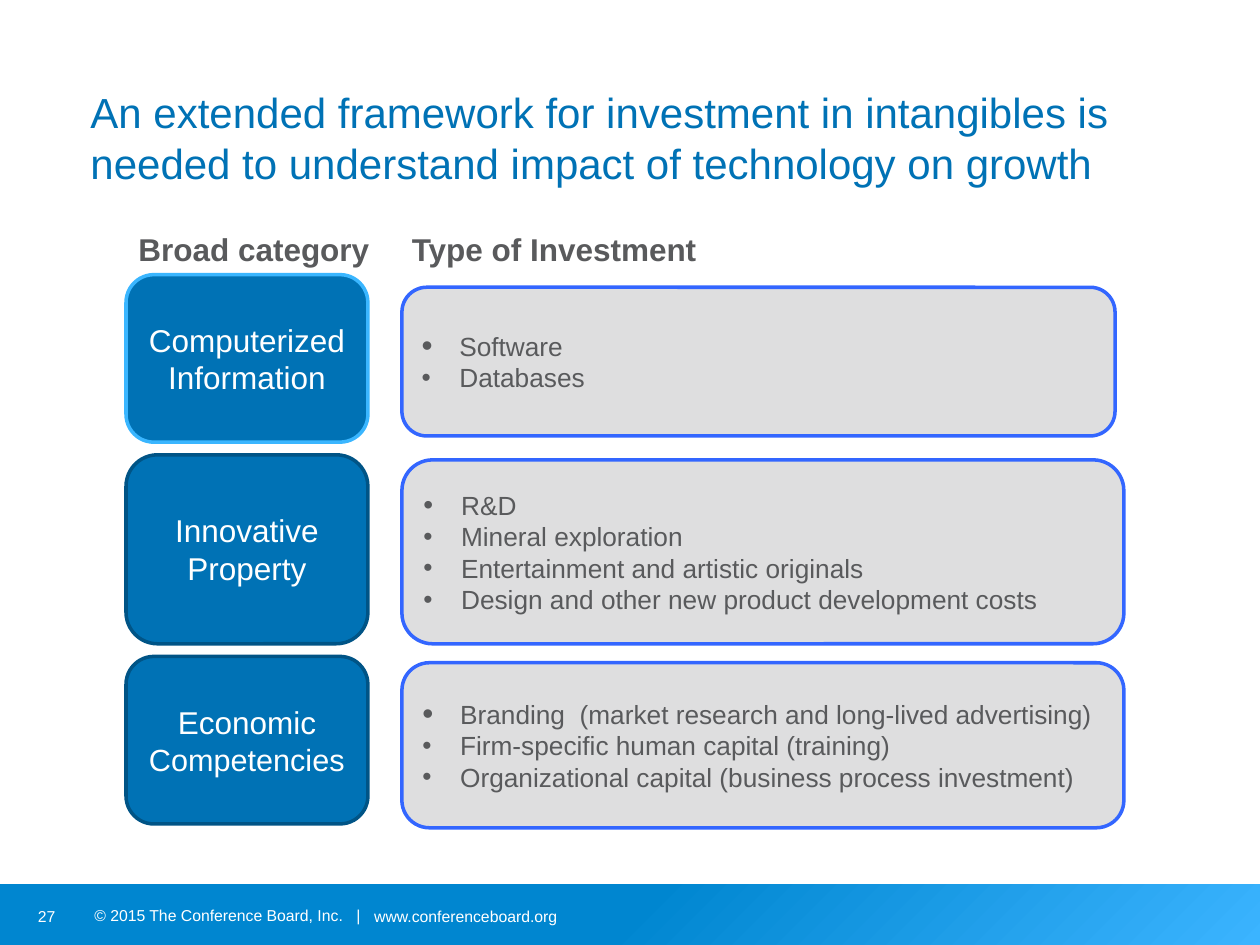
from lxml import etree
from pptx import Presentation
from pptx.dml.color import RGBColor
from pptx.enum import shapes, text
from pptx.oxml.ns import qn
from pptx.util import Inches, Pt

COLORS = {"blue": "0072B5", "light_edge": "3AB6FF", "dark_edge": "005486",
          "gray": "DEDEDF", "gray_edge": "3366FF", "ink": "595A5C",
          "white": "FFFFFF", "band_light": "3BB4FF", "band": "0086D0"}

TITLE = ("An extended framework for investment in intangibles is needed "
         "to understand impact of technology on growth")
HEADINGS = "Broad category\tType of Investment"

# category as (text, size) runs, edge colour, category top and height,
# investment top, width and height, size of first bullet, investments
ROWS = [
    ([("Computerized Information", 18)], "light_edge", 2.18, 1.33,
     2.28, 5.66, 1.18, 120, ["Software", "Databases"]),
    ([("Innovative Property", 18)], "dark_edge", 3.61, 1.5,
     3.65, 5.73, 1.46, 107,
     ["R&D", "Mineral exploration", "Entertainment and artistic originals",
      "Design and other new product development costs"]),
    ([("Economic ", 18), ("Competencies", 17.5)], "dark_edge", 5.21, 1.33,
     5.26, 5.73, 1.31, 120,
     ["Branding  (market research and long-lived advertising)",
      "Firm-specific human capital (training)",
      "Organizational capital (business process investment)"]),
]
CATEGORY_LEFT, CATEGORY_WIDTH, INVESTMENT_LEFT = 1, 1.92, 3.19
BULLET_INDENT = 0.3

# text, left, top, width, height, inset, tab stop
FOOTER = [
    ("27", 0.3, 7.07, 0.42, 0.4, 0, None),
    ("© 2015 The Conference Board, Inc.\t|", 0.65, 7.09, 2.52, 0.35, 0.1, 2.08),
    ("www.conferenceboard.org", 2.97, 7.07, 1.63, 0.4, 0, None),
]


def rgb(name):
    return RGBColor.from_string(COLORS[name])


def style(font, size, color, bold=False):
    font.name, font.size, font.bold = "Arial", Pt(size), bold
    font.color.rgb = rgb(color)


def add_tab(paragraph, position):
    tabs = etree.SubElement(paragraph._p.get_or_add_pPr(), qn("a:tabLst"))
    etree.SubElement(tabs, qn("a:tab"), pos=str(Inches(position)), algn="l")


def add_bullet(paragraph, percent):
    props = paragraph._p.get_or_add_pPr()
    props.set("marL", str(Inches(BULLET_INDENT)))
    props.set("indent", str(-Inches(BULLET_INDENT)))
    etree.SubElement(props, qn("a:buSzPct"), val=str(percent * 1000))
    etree.SubElement(props, qn("a:buFont"), typeface="Arial")
    etree.SubElement(props, qn("a:buChar"), char="•")


def add_label(slide, words, left, top, width, height, size, color,
              bold=False, tab=None):
    box = slide.shapes.add_textbox(*map(Inches, (left, top, width, height)))
    frame = box.text_frame
    frame.word_wrap = True
    frame.text = words
    paragraph = frame.paragraphs[0]
    if tab:
        add_tab(paragraph, tab)
    for run in paragraph.runs:
        style(run.font, size, color, bold)
    return frame


def add_card(slide, left, top, width, height, fill, edge):
    card = slide.shapes.add_shape(shapes.MSO_SHAPE.ROUNDED_RECTANGLE,
                                  *map(Inches, (left, top, width, height)))
    card.shadow.inherit = False
    card.fill.solid()
    card.fill.fore_color.rgb = rgb(fill)
    card.line.color.rgb = rgb(edge)
    card.line.width = Pt(2)
    frame = card.text_frame
    frame.word_wrap = True
    frame.vertical_anchor = text.MSO_ANCHOR.MIDDLE
    return frame


def add_footer(slide):
    band = slide.shapes.add_shape(shapes.MSO_SHAPE.RECTANGLE,
                                  *map(Inches, (0, 7.02, 10, 0.48)))
    band.shadow.inherit = False
    band.line.fill.background()
    band.fill.gradient()
    band.fill.gradient_angle = 135
    stops = [("band_light", 0), ("band", 0.5)]
    for stop, (color, position) in zip(band.fill.gradient_stops, stops):
        stop.color.rgb = rgb(color)
        stop.position = position
    for words, left, top, width, height, inset, tab in FOOTER:
        frame = add_label(slide, words, left, top, width, height, 9, "white", tab=tab)
        frame.margin_left = frame.margin_right = Inches(inset)
        frame.margin_top = frame.margin_bottom = Inches(inset / 2)
        frame.vertical_anchor = text.MSO_ANCHOR.MIDDLE


def add_category(slide, runs, edge, top, height):
    frame = add_card(slide, CATEGORY_LEFT, top, CATEGORY_WIDTH, height, "blue", edge)
    paragraph = frame.paragraphs[0]
    paragraph.alignment = text.PP_ALIGN.CENTER
    for words, size in runs:
        run = paragraph.add_run()
        run.text = words
        style(run.font, size, "white")


def add_investments(slide, items, top, width, height, first_bullet):
    frame = add_card(slide, INVESTMENT_LEFT, top, width, height, "gray", "gray_edge")
    frame.text = "\n".join(items)
    for index, paragraph in enumerate(frame.paragraphs):
        paragraph.alignment = text.PP_ALIGN.LEFT
        add_bullet(paragraph, 100 if index else first_bullet)
        style(paragraph.runs[0].font, 15, "ink")


def main():
    deck = Presentation()
    deck.slide_width, deck.slide_height = Inches(10), Inches(7.5)
    slide = deck.slides.add_slide(deck.slide_layouts[6])

    add_footer(slide)

    # Framework rows
    for (runs, edge, category_top, category_height, top, width, height,
         first_bullet, items) in ROWS:
        add_category(slide, runs, edge, category_top, category_height)
        add_investments(slide, items, top, width, height, first_bullet)

    # Column headings and title
    add_label(slide, HEADINGS, 1, 1.78, 5.53, 0.4, 18, "ink", bold=True, tab=2.17)
    add_label(slide, TITLE, 0.62, 0.64, 8.3, 0.91, 24, "blue")

    deck.save("out.pptx")


if __name__ == "__main__":
    main()
